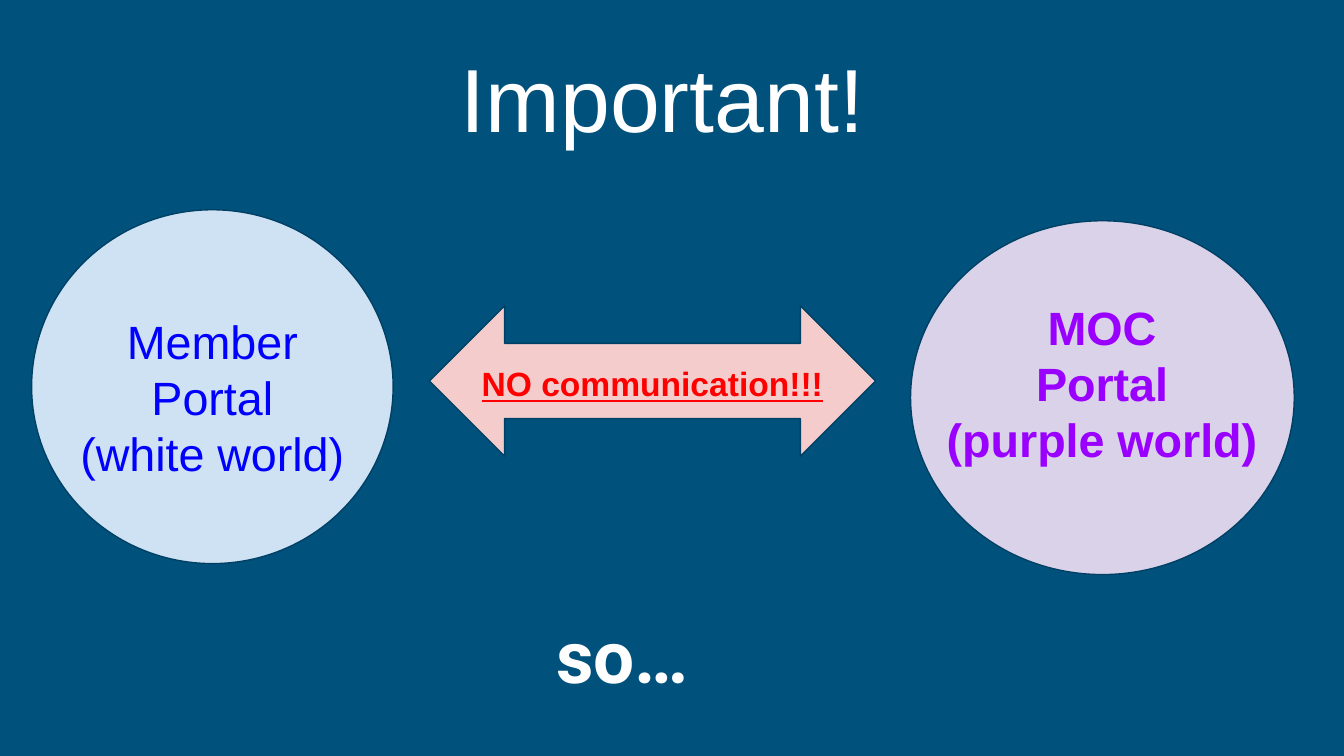
from pptx import Presentation
from pptx.dml.color import RGBColor
from pptx.enum.shapes import MSO_SHAPE
from pptx.enum.text import MSO_ANCHOR, MSO_AUTO_SIZE, PP_ALIGN
from pptx.util import Inches, Pt

OVAL, ARROW = MSO_SHAPE.OVAL, MSO_SHAPE.LEFT_RIGHT_ARROW
LEFT, CENTER = PP_ALIGN.LEFT, PP_ALIGN.CENTER

NAVY = RGBColor(0x00, 0x51, 0x7C)
OUTLINE = RGBColor(0x00, 0x40, 0x65)
WHITE = RGBColor(0xFF, 0xFF, 0xFF)
PALE_BLUE = RGBColor(0xCF, 0xE2, 0xF3)
LILAC = RGBColor(0xD9, 0xD2, 0xE9)
PINK = RGBColor(0xF4, 0xCC, 0xCC)
BLUE = RGBColor(0x00, 0x00, 0xFF)
PURPLE = RGBColor(0x99, 0x00, 0xFF)
RED = RGBColor(0xFF, 0x00, 0x00)

prs = Presentation()
prs.slide_width = Inches(10)
prs.slide_height = prs.slide_width * 9 // 16


def area(left, top, width, height):
    """Turn percentages of the slide's size into lengths."""
    w, h = prs.slide_width / 100, prs.slide_height / 100
    return int(left * w), int(top * h), int(width * w), int(height * h)


def write(sp, text, size, color, bold=False, underline=False,
          font="Arial", align=CENTER):
    tf = sp.text_frame
    tf.text = text
    tf.word_wrap = True
    tf.auto_size = MSO_AUTO_SIZE.NONE
    tf.vertical_anchor = MSO_ANCHOR.TOP
    tf.margin_left = tf.margin_right = Inches(0.1)
    tf.margin_top = tf.margin_bottom = Inches(0.1)
    for p in tf.paragraphs:
        p.alignment = align
        for r in p.runs:
            r.font.name = font
            r.font.size = Pt(size)
            r.font.bold = bold
            r.font.underline = underline
            r.font.color.rgb = color


s = prs.slides.add_slide(prs.slide_layouts[5])
s.background.fill.solid()
s.background.fill.fore_color.rgb = NAVY

title = s.shapes.title
title.left, title.top, title.width, title.height = area(4.3, 3.9, 90, 18)
write(title, "Important!", 48, WHITE)

# The two worlds and the barrier between them
for kind, box, fill in [
    (OVAL, (2.35, 27.75, 26.9, 46.8), PALE_BLUE),
    (OVAL, (67.75, 29.2, 28.55, 46.8), LILAC),
    (ARROW, (31.95, 40.45, 33.2, 19.9), PINK),
]:
    sp = s.shapes.add_shape(kind, *area(*box))
    sp.shadow.inherit = False
    sp.fill.solid()
    sp.fill.fore_color.rgb = fill
    sp.line.color.rgb = OUTLINE
    sp.line.width = Pt(0.75)

for box, text, size, color, style in [
    ((3.3, 39.65, 25, 26), "Member\nPortal\n(white world)", 25, BLUE, {}),
    ((68.8, 37.75, 26.4, 26), "MOC\nPortal\n(purple world)", 25, PURPLE,
     {"bold": True}),
    ((34.7, 46.3, 27.7, 8.9), "NO communication!!!", 18, RED,
     {"bold": True, "underline": True}),
    ((40.4, 78.95, 16.3, 15.3), "so…", 39, WHITE,
     {"bold": True, "font": "Roboto", "align": LEFT}),
]:
    write(s.shapes.add_textbox(*area(*box)), text, size, color, **style)

prs.save("out.pptx")
